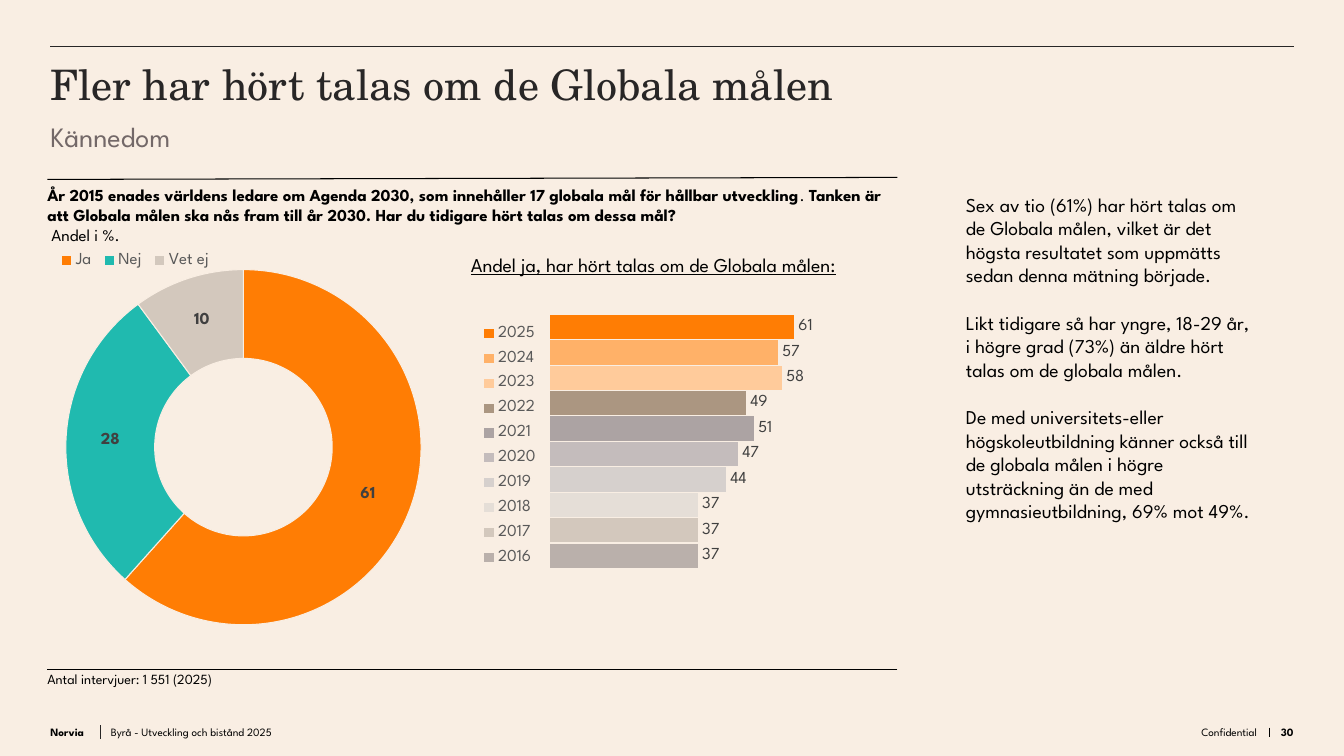
import lxml.etree
import pptx
import pptx.chart.data
import pptx.dml.color
import pptx.enum.chart
import pptx.enum.shapes
import pptx.enum.text
import pptx.oxml.ns
import pptx.util

PX = 9144  # EMU per px, 100 px to the inch
SANS = "League Spartan"
SERIF = "TeX Gyre Schola"
BLACK, DARK, GREY, PAPER = "000000", "282626", "595959", "F9EEE3"
ORANGE = "FF7D04"

SHARES = [("Ja", 61, ORANGE), ("Nej", 28, "20BAAF"), ("Vet ej", 10, "D3C8BD")]
YEARS = [
    ("2016", 37, "BAB0AB"), ("2017", 37, "D3C8BD"), ("2018", 37, "E5DED7"),
    ("2019", 44, "D6D0CD"), ("2020", 47, "C4BCBC"), ("2021", 51, "ACA3A3"),
    ("2022", 49, "AB9681"), ("2023", 58, "FFCB9B"), ("2024", 57, "FFB168"),
    ("2025", 61, ORANGE),
]
ASIDE = [
    "Sex av tio (61%) har hört talas om de Globala målen, vilket är det högsta "
    "resultatet som uppmätts sedan denna mätning började.",
    "Likt tidigare så har yngre, 18-29 år, i högre grad (73%) än äldre hört "
    "talas om de globala målen.",
    "De med universitets-eller högskoleutbildning känner också till de globala "
    "målen i högre utsträckning än de med gymnasieutbildning, 69% mot 49%.",
]
# An asterisk switches bold on or off
QUESTION = [
    "År 2015 enades världens ledare om Agenda 2030, som innehåller 17 globala "
    "mål för hållbar utveckling*. *Tanken är att Globala målen ska nås fram "
    "till år 2030. Har du tidigare hört talas om dessa mål?",
    "* Andel i %.",
]


def color(code):
    return pptx.dml.color.RGBColor.from_string(code)


def place(parent, index, box, inner=False):
    """Give a chart part a fixed place, as shares of the chart."""
    qn = pptx.oxml.ns.qn
    for old in parent.findall(qn("c:layout")):
        parent.remove(old)
    layout = lxml.etree.Element(qn("c:layout"))
    manual = lxml.etree.SubElement(layout, qn("c:manualLayout"))
    pairs = [("layoutTarget", "inner")] if inner else []
    pairs += [("xMode", "edge"), ("yMode", "edge")] + list(zip("xywh", box))
    for tag, value in pairs:
        lxml.etree.SubElement(manual, qn("c:" + tag), val=str(value))
    parent.insert(index, layout)


class Page:
    def __init__(self, deck):
        self.slide = deck.slides.add_slide(deck.slide_layouts[6])
        self.shapes = self.slide.shapes
        fill = self.slide.background.fill
        fill.solid()
        fill.fore_color.rgb = color(PAPER)

    def font(self, font, size, tint, face=SANS):
        font.size = pptx.util.Pt(size)
        font.name = face
        font.color.rgb = color(tint)

    def line(self, x1, y1, x2, y2, width=0.5, tint=BLACK):
        kind = pptx.enum.shapes.MSO_CONNECTOR.STRAIGHT
        line = self.shapes.add_connector(kind, x1 * PX, y1 * PX, x2 * PX, y2 * PX)
        line.line.width = pptx.util.Pt(width)
        line.line.color.rgb = color(tint)
        props = line._element.spPr
        lxml.etree.SubElement(props, pptx.oxml.ns.qn("a:effectLst"))

    def text(self, x, y, w, h, paras, size, tint=BLACK, face=SANS, bold=False,
             under=False, right=False, low=False, top=0, gap=0, wrap=True):
        box = self.shapes.add_textbox(x * PX, y * PX, w * PX, h * PX)
        frame = box.text_frame
        frame.word_wrap = wrap
        frame.margin_left = frame.margin_right = frame.margin_bottom = 0
        frame.margin_top = top * PX
        anchor = pptx.enum.text.MSO_ANCHOR
        frame.vertical_anchor = anchor.BOTTOM if low else anchor.TOP
        align = pptx.enum.text.PP_ALIGN
        for i, para in enumerate(paras):
            p = frame.add_paragraph() if i else frame.paragraphs[0]
            p.alignment = align.RIGHT if right else align.LEFT
            if i < len(paras) - 1:
                p.space_after = pptx.util.Pt(gap)
            for j, part in enumerate(para.split("*")):
                if part:
                    run = p.add_run()
                    run.text = part
                    self.font(run.font, size, tint, face)
                    run.font.bold = bold != (j % 2 == 1)
                    run.font.underline = under

    def paint(self, item, tint):
        item.format.fill.solid()
        item.format.fill.fore_color.rgb = color(tint)
        item.format.line.color.rgb = color(PAPER)
        item.format.line.width = pptx.util.Pt(0.75)

    def label(self, labels, bold=False):
        labels.show_value = True
        self.font(labels.font, 12, "404040")
        labels.font.bold = bold

    def chart(self, kind, x, y, w, h, cats, series, plot, key):
        data = pptx.chart.data.CategoryChartData()
        data.categories = cats
        for name, values in series:
            data.add_series(name, values)
        chart = self.shapes.add_chart(
            kind, x * PX, y * PX, w * PX, h * PX, data).chart
        self.font(chart.font, 10, BLACK)
        chart.has_title = False
        chart.has_legend = True
        chart.legend.position = pptx.enum.chart.XL_LEGEND_POSITION.BOTTOM
        chart.legend.include_in_layout = False
        self.font(chart.legend.font, 12, GREY)
        place(chart.legend._element, 1, key)
        place(chart._chartSpace.xpath(".//c:plotArea")[0], 0, plot, True)
        return chart

    def ring(self, x, y, w, h, rows, plot, key):
        names, values, tints = zip(*rows)
        chart = self.chart(pptx.enum.chart.XL_CHART_TYPE.DOUGHNUT, x, y, w, h,
                           names, [("Series 1", values)], plot, key)
        ring = chart.plots[0]
        ring.vary_by_categories = True
        chart._chartSpace.xpath(".//c:holeSize")[0].set("val", "75")
        for i, tint in enumerate(tints):
            self.paint(ring.series[0].points[i], tint)
        self.label(ring.series[0].data_labels, bold=True)

    def bars(self, x, y, w, h, rows, plot, key):
        chart = self.chart(
            pptx.enum.chart.XL_CHART_TYPE.BAR_CLUSTERED, x, y, w, h, ["1"],
            [(name, [value]) for name, value, tint in rows], plot, key)
        bars = chart.plots[0]
        bars.vary_by_categories = False
        bars.gap_width = 182
        axis = chart.value_axis
        axis.minimum_scale, axis.maximum_scale = 0, 100
        axis.has_major_gridlines = False
        axis.visible = chart.category_axis.visible = False
        for item, (name, value, tint) in zip(bars.series, rows):
            self.paint(item, tint)
            self.label(item.data_labels)
            spot = pptx.enum.chart.XL_LABEL_POSITION.OUTSIDE_END
            item.data_labels.position = spot


def main():
    deck = pptx.Presentation()
    deck.slide_width, deck.slide_height = 1333 * PX, 750 * PX
    page = Page(deck)

    # Heading
    page.line(50, 46, 1283, 46, tint=DARK)
    page.text(50, 48, 1232, 71, ["Fler har hört talas om de Globala målen"],
              30, DARK, SERIF, top=10)
    page.text(50, 119, 908, 47, ["Kännedom"], 20, "736868")

    # Question
    page.line(890, 176, 47, 178, 0.75)
    page.text(47, 183, 840, 43, QUESTION, 12, bold=True)

    # Charts
    page.ring(50, 241, 383, 436, SHARES,
              plot=(0.04, 0.06, 0.92, 0.81), key=(0.01, 0.01, 0.42, 0.06))
    page.bars(461, 251, 497, 420, YEARS,
              plot=(0.17, 0.09, 0.8, 0.71), key=(0.02, 0.15, 0.14, 0.61))
    page.text(467, 251, 438, 24,
              ["Andel ja, har hört talas om de Globala målen:"], 14,
              under=True, wrap=False)

    # Comments on the result
    page.text(958, 191, 285, 421, ASIDE, 14, gap=17)

    # Base of the survey
    page.line(890, 664, 47, 664, 0.75)
    page.text(47, 665, 587, 17, ["Antal intervjuer: 1 551 (2025)"], 10)

    # Footer
    page.text(50, 716, 50, 17, ["Norvia"], 8, bold=True, low=True)
    page.line(100, 733, 100, 719, tint=DARK)
    page.text(110, 716, 780, 17, ["Byrå - Utveckling och bistånd 2025"], 8, low=True)
    page.text(1027, 716, 220, 17, ["Confidential"], 8, right=True, low=True)
    page.line(1259, 722, 1259, 731)
    page.text(1259, 716, 24, 17, ["30"], 8, bold=True, right=True, low=True)

    deck.save("out.pptx")


if __name__ == "__main__":
    main()
